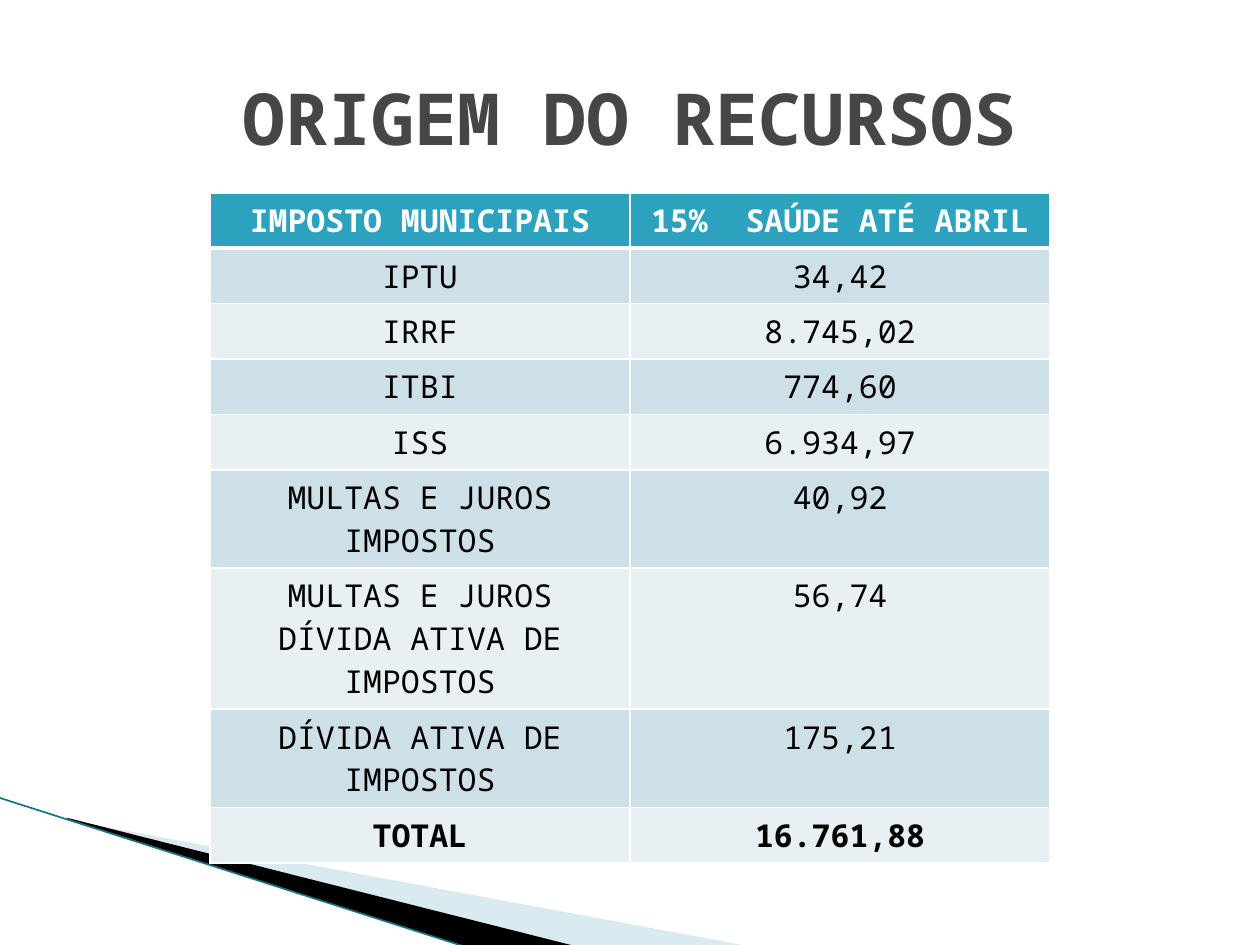
from lxml import etree
from pptx import Presentation
from pptx.dml.color import RGBColor
from pptx.enum.shapes import MSO_CONNECTOR
from pptx.enum.text import MSO_ANCHOR, PP_ALIGN
from pptx.oxml.ns import qn
from pptx.util import Inches, Pt

CENTER = PP_ALIGN.CENTER
MIDDLE = MSO_ANCHOR.MIDDLE
STRAIGHT = MSO_CONNECTOR.STRAIGHT
FONT = "Noto Sans Mono"
COLORS = {
    "title": "464646", "text": "000000", "white": "FFFFFF",
    "header": "2DA2BF", "odd_row": "CDE0E8", "even_row": "E8F0F4",
    "pale_wedge": "A0CBDC", "dark_wedge": "000000", "edge": "1B7085",
}
# Tax, amount, lines of text in the row
TAXES = [
    ("IMPOSTO MUNICIPAIS", "15%  SAÚDE ATÉ ABRIL", 1),
    ("IPTU", "34,42", 1),
    ("IRRF", "8.745,02", 1),
    ("ITBI", "774,60", 1),
    ("ISS", "6.934,97", 1),
    ("MULTAS E JUROS IMPOSTOS", "40,92", 2),
    ("MULTAS E JUROS DÍVIDA ATIVA DE IMPOSTOS", "56,74", 3),
    ("DÍVIDA ATIVA DE IMPOSTOS", "175,21", 2),
    ("TOTAL", "16.761,88", 1),
]


def rgb(name):
    return RGBColor.from_string(COLORS[name])


def write_text(frame, text, size=18, color="text", bold=False):
    paragraph = frame.paragraphs[0]
    paragraph.alignment = CENTER
    run = paragraph.add_run()
    run.text = text
    run.font.name = FONT
    run.font.size = Pt(size)
    run.font.bold = bold
    run.font.color.rgb = rgb(color)


def add_wedge(slide, points, color, opacity=100):
    corners = [(Inches(x), Inches(y)) for x, y in points]
    builder = slide.shapes.build_freeform(*corners[0])
    builder.add_line_segments(corners[1:], close=True)
    wedge = builder.convert_to_shape()
    wedge.shadow.inherit = False
    wedge.line.fill.background()
    wedge.fill.solid()
    wedge.fill.fore_color.rgb = rgb(color)
    if opacity < 100:
        fill_color = wedge.fill._xPr.find(qn("a:solidFill"))[0]
        etree.SubElement(fill_color, qn("a:alpha")).set("val", str(opacity * 1000))


def add_edge(slide, start, end):
    edge = slide.shapes.add_connector(STRAIGHT, *map(Inches, start + end))
    edge.line.color.rgb = rgb("edge")
    edge.line.width = Pt(0.95)
    etree.SubElement(edge._element.spPr, qn("a:effectLst"))


def add_title(slide, text):
    title = slide.shapes.add_textbox(Inches(0.5), Inches(0.3), Inches(9), Inches(1.25))
    title.text_frame.word_wrap = True
    title.text_frame.vertical_anchor = MIDDLE
    write_text(title.text_frame, text, size=41, color="title", bold=True)


def set_borders(cell, bottom):
    properties = cell._tc.get_or_add_tcPr()
    widths = {"L": 1, "R": 1, "T": 1, "B": bottom}
    for index, (side, width) in enumerate(widths.items()):
        border = etree.Element(qn(f"a:ln{side}"), w=str(Pt(width)))
        fill = etree.SubElement(border, qn("a:solidFill"))
        etree.SubElement(fill, qn("a:srgbClr"), val=COLORS["white"])
        properties.insert(index, border)


def add_tax_table(slide, rows):
    # Cell margins take 0.1 in, each line of text 0.34 in
    heights = [Inches(0.1 + 0.34 * lines) for *_, lines in rows]
    width = Inches(6.67)
    table = slide.shapes.add_table(
        len(rows), 2, (Inches(10) - width) // 2, Inches(1.53), width, sum(heights)
    ).table
    last = len(rows) - 1
    for r, (*values, _) in enumerate(rows):
        table.rows[r].height = heights[r]
        header = r == 0
        band = "header" if header else "odd_row" if r % 2 else "even_row"
        for c, value in enumerate(values):
            cell = table.cell(r, c)
            cell.fill.solid()
            cell.fill.fore_color.rgb = rgb(band)
            set_borders(cell, bottom=3 if header else 1)
            write_text(cell.text_frame, value, color="white" if header else "text",
                       bold=r in (0, last))


def main():
    prs = Presentation()
    prs.slide_width, prs.slide_height = Inches(10), Inches(7.5)
    slide = prs.slides.add_slide(prs.slide_layouts[6])

    # Corner decoration
    add_wedge(slide, [(0.55, 6.51), (5.95, 7.51), (4.56, 7.51), (0.55, 6.5)],
              "pale_wedge", opacity=40)
    add_wedge(slide, [(0.53, 6.49), (4.57, 7.51), (3.72, 7.52), (0.54, 6.5)],
              "dark_wedge")
    add_edge(slide, (-0.01, 6.33), (3.71, 7.52))

    # Title and tax revenue
    add_title(slide, "ORIGEM DO RECURSOS")
    add_tax_table(slide, TAXES)

    prs.save("out.pptx")


if __name__ == "__main__":
    main()
